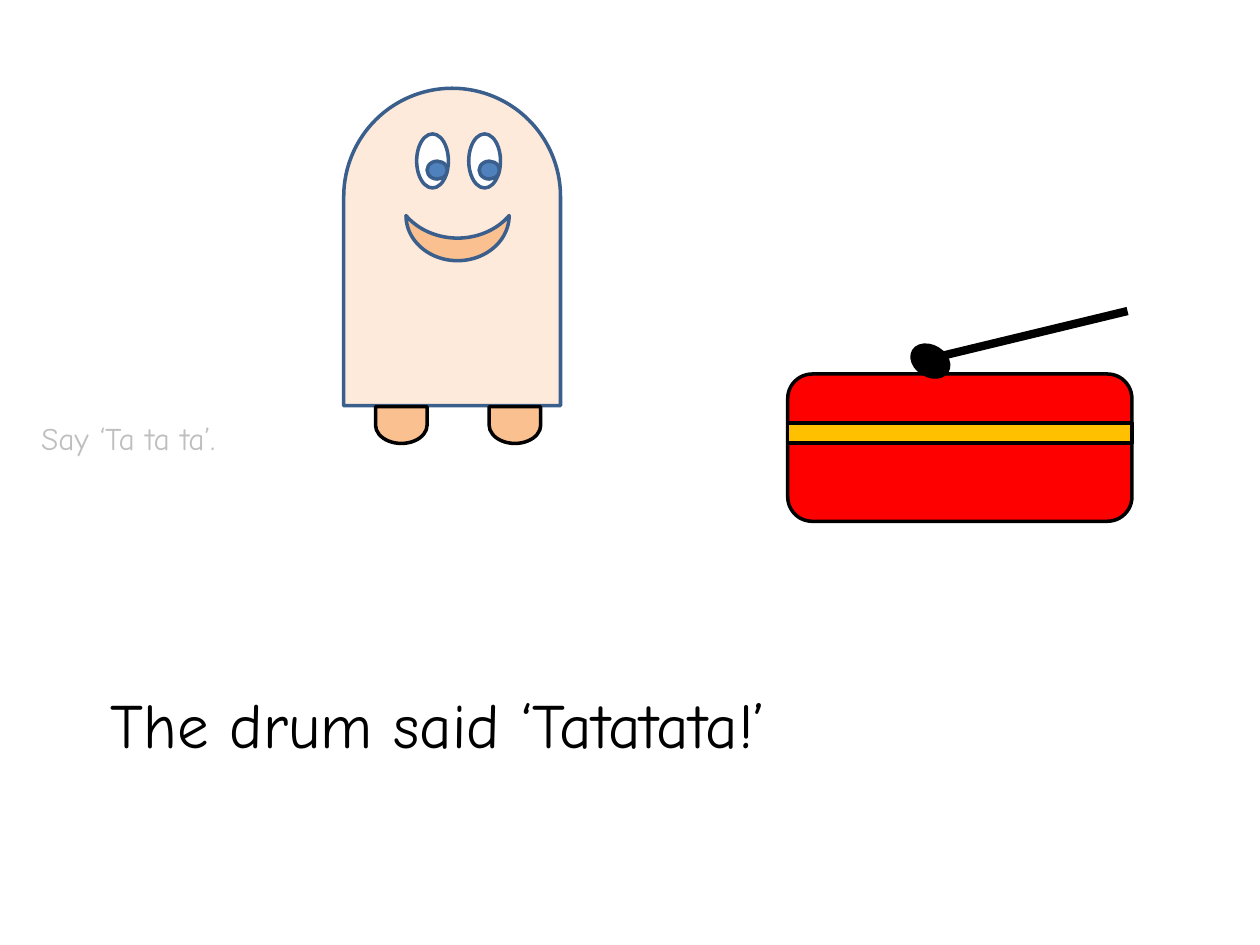
from pptx import Presentation
from pptx.dml.color import RGBColor
from pptx.enum.shapes import MSO_CONNECTOR, MSO_SHAPE
from pptx.enum.text import MSO_AUTO_SIZE
from pptx.oxml.ns import qn
from pptx.util import Cm, Pt
from lxml.etree import SubElement

BLACK = RGBColor(0x00, 0x00, 0x00)
WHITE = RGBColor(0xFF, 0xFF, 0xFF)
GREY = RGBColor(0xBF, 0xBF, 0xBF)
OUTLINE_BLUE = RGBColor(0x3A, 0x5F, 0x8C)
PUPIL_BLUE = RGBColor(0x4F, 0x81, 0xBD)
SKIN = RGBColor(0xFD, 0xEA, 0xDA)
ORANGE = RGBColor(0xFA, 0xC0, 0x90)
RED = RGBColor(0xFF, 0x00, 0x00)
YELLOW = RGBColor(0xFF, 0xC0, 0x00)


class StoryPage:
    font_name = "Comic Neue"
    line_width = Pt(2)

    def __init__(self, presentation):
        self.slide = presentation.slides.add_slide(presentation.slide_layouts[6])

    def group(self):
        return self.slide.shapes.add_group_shape().shapes

    def shape(self, shapes, kind, box, fill, outline=BLACK, rotation=0, adjustments=()):
        shape = shapes.add_shape(kind, *map(Cm, box))
        shape.shadow.inherit = False
        shape.rotation = rotation
        for index, value in enumerate(adjustments):
            shape.adjustments[index] = value
        shape.fill.solid()
        shape.fill.fore_color.rgb = fill
        shape.line.color.rgb = outline
        shape.line.width = self.line_width

    def line(self, shapes, start, end, color, width):
        connector = shapes.add_connector(MSO_CONNECTOR.STRAIGHT, *map(Cm, start + end))
        connector.line.color.rgb = color
        connector.line.width = Pt(width)
        SubElement(connector._element.spPr, qn("a:effectLst"))

    def text(self, words, box, size, color):
        text_frame = self.slide.shapes.add_textbox(*map(Cm, box)).text_frame
        text_frame.word_wrap = True
        text_frame.auto_size = MSO_AUTO_SIZE.SHAPE_TO_FIT_TEXT
        run = text_frame.paragraphs[0].add_run()
        run.text = words
        font_format = {"name": self.font_name, "size": Pt(size)}
        for name, value in font_format.items():
            setattr(run.font, name, value)
        run.font.color.rgb = color


def draw_character(page):
    character = page.group()
    page.shape(character, MSO_SHAPE.ROUND_2_SAME_RECTANGLE, (6.93, 1.78, 4.37, 6.4),
               SKIN, OUTLINE_BLUE, adjustments=(0.5, 0))
    page.shape(character, MSO_SHAPE.MOON, (8.77, 3.76, 0.91, 2.08),
               ORANGE, OUTLINE_BLUE, rotation=270)
    for left in (8.4, 9.45):
        page.shape(character, MSO_SHAPE.OVAL, (left, 2.7, 0.64, 1.09), WHITE, OUTLINE_BLUE)
        page.shape(character, MSO_SHAPE.OVAL, (left + 0.21, 3.25, 0.41, 0.36),
                   PUPIL_BLUE, OUTLINE_BLUE)
    for left in (7.72, 10.01):
        page.shape(character, MSO_SHAPE.FLOWCHART_DELAY, (left, 8.05, 0.74, 1.04),
                   ORANGE, rotation=90)


def draw_drum(page):
    shapes = page.slide.shapes
    page.shape(shapes, MSO_SHAPE.ROUNDED_RECTANGLE, (15.88, 7.54, 6.94, 2.97), RED)
    page.shape(shapes, MSO_SHAPE.RECTANGLE, (15.88, 8.53, 6.94, 0.4), YELLOW)
    drumstick = page.group()
    page.shape(drumstick, MSO_SHAPE.OVAL, (18.36, 6.99, 0.79, 0.58), BLACK, rotation=31.5)
    page.line(drumstick, (18.92, 7.19), (22.73, 6.27), BLACK, 4.75)


def main():
    presentation = Presentation()
    presentation.slide_width = Cm(25.4)
    presentation.slide_height = Cm(19.05)
    page = StoryPage(presentation)
    draw_character(page)
    draw_drum(page)
    page.text("The drum said ‘Tatatata!’", (1.98, 13.69, 21.44, 1.8), 36, BLACK)
    page.text("Say ‘Ta ta ta’.", (0.58, 8.33, 4.37, 1.8), 18, GREY)
    presentation.save("out.pptx")


if __name__ == "__main__":
    main()
